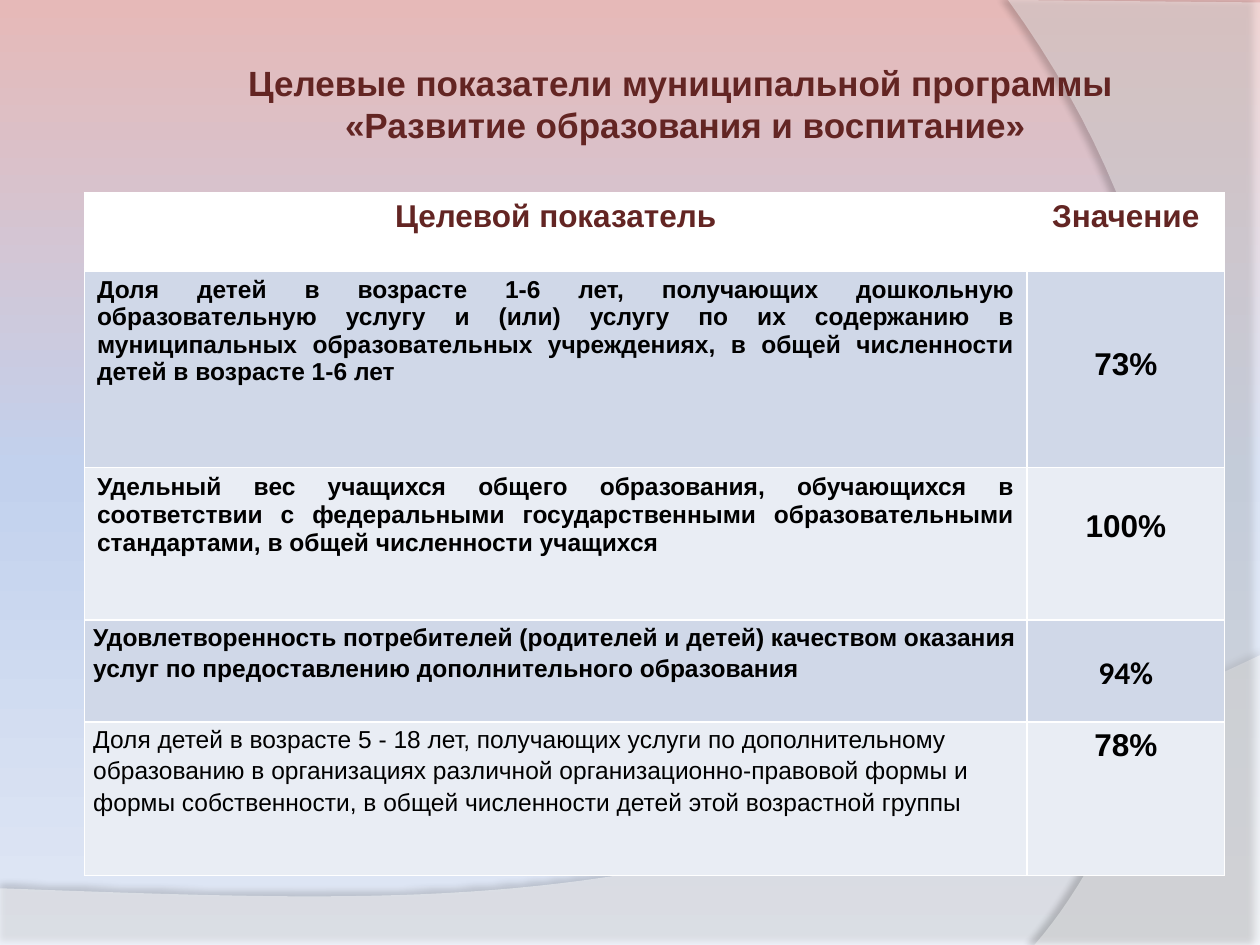
from copy import deepcopy
from dataclasses import dataclass

from lxml.etree import SubElement
from pptx import Presentation
from pptx.dml.color import RGBColor
from pptx.enum.text import MSO_ANCHOR, PP_ALIGN
from pptx.oxml.ns import qn
from pptx.util import Inches, Pt


@dataclass(frozen=True)
class Theme:
    font: str = "Arial"
    alt_font: str = "Calibri"
    accent: str = "632523"
    ink: str = "000000"
    white: str = "FFFFFF"
    bands: tuple = ("D0D8E8", "E9EDF4")
    sky: tuple = ((0, "E6B9B8"), (0.5, "C2D1ED"), (1, "E1E8F5"))
    title: int = 20
    head: int = 18
    body: int = 14


T = Theme()


def u(n):
    """Grid units to EMU: the slide is 100 columns by 75 rows."""
    return Inches(n / 10)


def sub(parent, tag, **attrs):
    return SubElement(parent, qn(tag), {k: str(v) for k, v in attrs.items()})


def color_fill(parent, color, opacity=100):
    clr = sub(sub(parent, "a:solidFill"), "a:srgbClr", val=color)
    if opacity < 100:
        sub(clr, "a:alpha", val=opacity * 1000)


def write(tf, text, size=T.body, color=T.ink, bold=True, font=T.font,
          align=PP_ALIGN.LEFT, spacing=None):
    """Fill a text frame, one paragraph per line of text."""
    tf.word_wrap = True
    for i, line in enumerate(text.split("\n")):
        p = tf.add_paragraph() if i else tf.paragraphs[0]
        p.alignment = align
        if spacing:
            p.line_spacing = spacing
        r = p.add_run()
        r.text = line
        r.font.size, r.font.bold, r.font.name = Pt(size), bold, font
        r.font.color.rgb = RGBColor.from_string(color)


def curve(p0, p1, p2, p3, steps=48):
    """Points along a cubic curve, without its start."""
    for i in range(1, steps + 1):
        t = i / steps
        weights = ((1 - t) ** 3, 3 * t * (1 - t) ** 2, 3 * t * t * (1 - t), t ** 3)
        yield tuple(sum(w * p[k] for w, p in zip(weights, (p0, p1, p2, p3)))
                    for k in (0, 1))


class Page:
    def __init__(self, prs, theme):
        self.theme = theme
        self.s = prs.slides.add_slide(prs.slide_layouts[6])

    def background(self):
        fill = self.s.background.fill
        fill.gradient()
        fill.gradient_angle = 270
        stops = self.s.element.xpath(".//a:gsLst")[0]
        stops.append(deepcopy(stops[-1]))
        for stop, (pos, color) in zip(fill.gradient_stops, self.theme.sky):
            stop.position = pos
            stop.color.rgb = RGBColor.from_string(color)

    def wave(self, points, opacity, shade, distance, direction):
        pts = [(u(x), u(y)) for x, y in points]
        fb = self.s.shapes.build_freeform(*pts[0])
        fb.add_line_segments(pts[1:], close=True)
        sp = fb.convert_to_shape()
        sp.line.fill.background()
        sp.fill.solid()
        sp.fill.fore_color.rgb = RGBColor.from_string(self.theme.white)
        clr = sp.element.spPr.find(qn("a:solidFill"))[0]
        sub(clr, "a:alpha", val=opacity * 1000)
        sp.shadow.inherit = False
        effects = sp.element.spPr.find(qn("a:effectLst"))
        shadow = sub(effects, "a:outerShdw", blurRad=Pt(4), dist=Pt(distance),
                     dir=direction * 60000, algn="ctr", rotWithShape=0)
        clr = sub(shadow, "a:srgbClr", val=self.theme.ink)
        sub(clr, "a:alpha", val=shade * 1000)

    def text(self, x, y, w, h, text, **fmt):
        sp = self.s.shapes.add_textbox(u(x), u(y), u(w), u(h))
        write(sp.text_frame, text, **fmt)

    def cell(self, cell, text, fill, tight=False, top=None, anchor=MSO_ANCHOR.TOP,
             border_bottom=1, **fmt):
        if tight:
            cell.margin_left = cell.margin_right = u(0.7)
            cell.margin_top = cell.margin_bottom = 0
        if top is not None:
            cell.margin_top = u(top)
        cell.vertical_anchor = anchor
        write(cell.text_frame, text, **fmt)
        tcPr = cell._tc.get_or_add_tcPr()
        for side in "LRTB":
            width = border_bottom if side == "B" else 1
            color_fill(sub(tcPr, f"a:ln{side}", w=Pt(width)), self.theme.white)
        cell.fill.solid()
        cell.fill.fore_color.rgb = RGBColor.from_string(fill)

    def table(self, x, y, cols, rows, header, records):
        frame = self.s.shapes.add_table(len(rows), len(cols), u(x), u(y),
                                        u(sum(cols)), u(sum(rows)))
        tbl = frame.table
        for col, w in zip(tbl.columns, cols):
            col.width = u(w)
        for row, h in zip(tbl.rows, rows):
            row.height = u(h)
        for j, name in enumerate(header):
            self.cell(tbl.cell(0, j), name, self.theme.white, border_bottom=3,
                      size=self.theme.head, color=self.theme.accent,
                      align=PP_ALIGN.CENTER)
        for i, (name, name_fmt, value, value_fmt) in enumerate(records):
            band = self.theme.bands[i % 2]
            self.cell(tbl.cell(i + 1, 0), name, band, **name_fmt)
            self.cell(tbl.cell(i + 1, 1), value, band, size=self.theme.head,
                      align=PP_ALIGN.CENTER, **value_fmt)


def main():
    prs = Presentation()
    prs.slide_width, prs.slide_height = u(100), u(75)
    page = Page(prs, T)

    # Backdrop: gradient and two translucent waves
    page.background()
    page.wave([(0, 70.5), (0, 75.1), (100, 75.1), (100, 52),
               *curve((100, 52), (55.9, 72.9), (39.1, 71.9), (0, 70.5))],
              opacity=45, shade=35, distance=3.5, direction=270)
    page.wave([(100, 0.2), (100, 75), (82.1, 75),
               *curve((82.1, 75), (93.5, 61.9), (101.8, 30), (80, 0))],
              opacity=40, shade=45, distance=4, direction=180)

    # Title
    page.text(4.3, 4.4, 100.2, 7.7,
              "Целевые показатели муниципальной программы \n"
              "«Развитие образования и воспитание»",
              size=T.title, color=T.accent, align=PP_ALIGN.CENTER)

    # Table of target indicators
    justified = dict(align=PP_ALIGN.JUSTIFY)
    loose = dict(tight=True, spacing=1.15)
    records = [
        ("Доля детей в возрасте 1-6 лет, получающих дошкольную образовательную "
         "услугу и (или) услугу по их содержанию в муниципальных образовательных "
         "учреждениях, в общей численности детей в возрасте 1-6 лет",
         justified, "73%", dict(top=6.1)),
        ("Удельный вес учащихся общего образования, обучающихся в соответствии с "
         "федеральными государственными образовательными стандартами, в общей "
         "численности учащихся",
         justified, "100%", dict(top=3.3)),
        ("Удовлетворенность потребителей (родителей и детей) качеством оказания "
         "услуг по предоставлению дополнительного образования",
         loose, "94%", dict(loose, anchor=MSO_ANCHOR.MIDDLE, font=T.alt_font)),
        ("Доля детей в возрасте 5 - 18 лет, получающих услуги по дополнительному "
         "образованию в организациях различной организационно-правовой формы и "
         "формы собственности, в общей численности детей этой возрастной группы",
         dict(loose, bold=False), "78%", {}),
    ]
    page.table(6.7, 15.3, cols=(74.8, 15.7), rows=(6.1, 15.7, 12.1, 8.1, 12.2),
               header=("Целевой показатель", "Значение"), records=records)

    prs.save("out.pptx")


if __name__ == "__main__":
    main()
